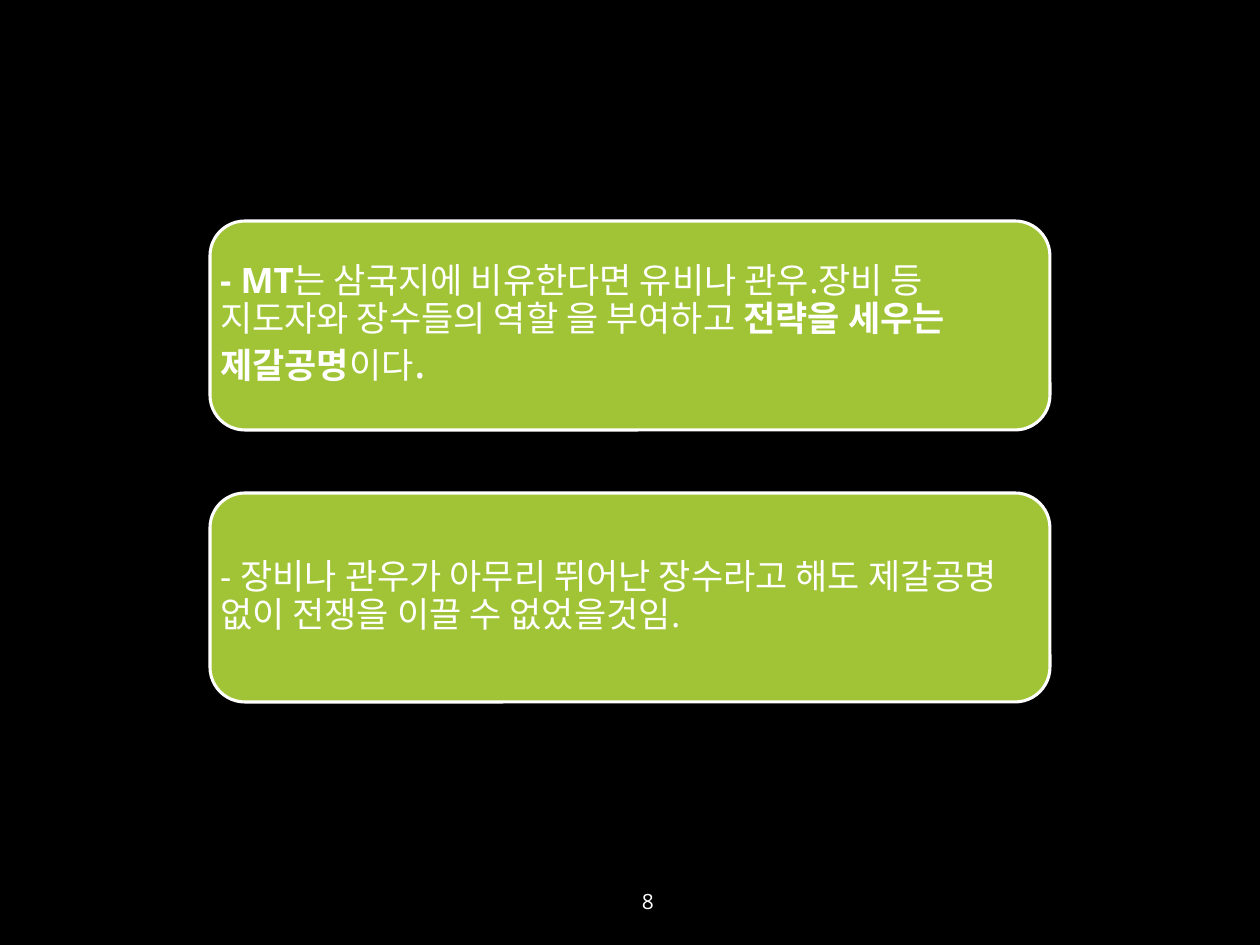
"""Build a slide with two rounded statement panels and a page number."""
from pptx import Presentation
from pptx.dml.color import RGBColor
from pptx.enum.shapes import MSO_SHAPE
from pptx.enum.text import MSO_ANCHOR, PP_ALIGN
from pptx.util import Emu, Pt

ROUNDED = MSO_SHAPE.ROUNDED_RECTANGLE
MIDDLE = MSO_ANCHOR.MIDDLE
LEFT, CENTER = PP_ALIGN.LEFT, PP_ALIGN.CENTER
FONT = "Open Sans"
COLORS = {name: RGBColor.from_string(value) for name, value in {
    "background": "000000", "panel": "A0C435", "light": "FFFFFF"}.items()}


def px(length):
    return Emu(round(length * 914400 / 126))


def add_run(paragraph, words, size, bold=False):
    run = paragraph.add_run()
    run.text = words
    run.font.name = FONT
    run.font.size = Pt(size)
    run.font.bold = bold
    run.font.color.rgb = COLORS["light"]


statements = [
    [("- MT", 20, True),
     ("는 삼국지에 비유한다면 유비나 관우.장비 등 지도자와 장수들의 역할 을 부여하고 ", 20, False),
     ("전략을 세우는 제갈공명", 20, True),
     ("이다", 20, False),
     (".", 26, False)],
    [("- 장비나 관우가 아무리 뛰어난 장수라고 해도 제갈공명 없이 전쟁을 이끌 수 없었을것임.", 20, False)],
]

prs = Presentation()
prs.slide_width, prs.slide_height = px(1260), px(945)
slide = prs.slides.add_slide(prs.slide_layouts[6])
slide.background.fill.solid()
slide.background.fill.fore_color.rgb = COLORS["background"]

for index, statement in enumerate(statements):
    panel = slide.shapes.add_shape(ROUNDED, px(210), px(221 + 272 * index), px(840), px(209))
    panel.shadow.inherit = False
    panel.fill.solid()
    panel.fill.fore_color.rgb = COLORS["panel"]
    panel.line.color.rgb = COLORS["light"]
    panel.line.width = Pt(1.75)
    frame = panel.text_frame
    frame.word_wrap = True
    frame.vertical_anchor = MIDDLE
    frame.margin_left = frame.margin_right = frame.margin_top = frame.margin_bottom = 0
    sentence = frame.paragraphs[0]
    sentence.alignment = LEFT
    sentence.line_spacing = 0.9
    for words, size, bold in statement:
        add_run(sentence, words, size, bold)

page_number = slide.shapes.add_textbox(px(571), px(876), px(154), px(50)).text_frame
page_number.word_wrap = True
page_number.vertical_anchor = MIDDLE
page_number.paragraphs[0].alignment = CENTER
add_run(page_number.paragraphs[0], "8", 12)

prs.save("out.pptx")
